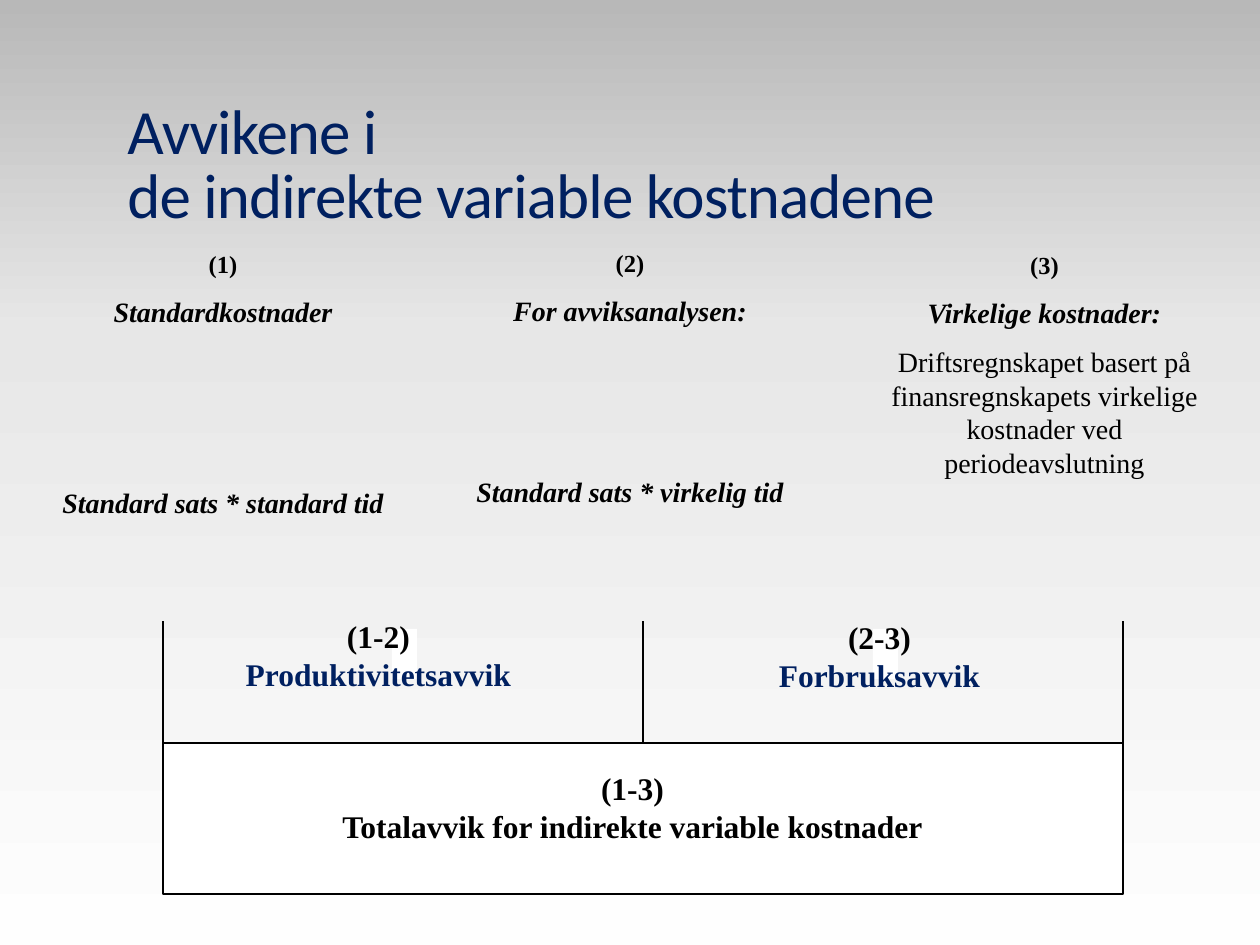
from copy import deepcopy

from lxml.etree import SubElement
from pptx import Presentation
from pptx.dml.color import RGBColor as RGB
from pptx.enum.shapes import MSO_CONNECTOR as CONN, MSO_SHAPE as SHAPE
from pptx.enum.text import MSO_ANCHOR as ANCHOR, PP_ALIGN as ALIGN
from pptx.oxml.ns import qn
from pptx.util import Emu, Pt


class Theme:
    heading_font, body_font = "Calibri", "Times New Roman"
    navy, black, white = (RGB.from_string(c) for c in ("002060", "000000", "FFFFFF"))
    background = [(0, "B8B8B8"), (35, "E7E7E7"), (100, "FEFEFE")]
    title, label, body, number = 36, 18, 16, 14
    gap = 9


# Content: each column is its box and (text, style, space before)
TITLE = "Avvikene i\vde indirekte variable kostnadene"
TITLE_BOX = (115, 86, 1240, 152)
COLUMNS = [
    ((42, 243, 362, 295), [
        ("(1)", "number", 0),
        ("Standardkostnader", "strong", Theme.gap),
        ("Standard sats * standard tid", "strong", 90)]),
    ((431, 242, 398, 281), [
        ("(2)", "number", 0),
        ("For avviksanalysen:", "strong", Theme.gap),
        ("Standard sats * virkelig tid", "strong", 84.5)]),
    ((874, 244, 341, 295), [
        ("(3)", "number", 0),
        ("Virkelige kostnader:", "strong", Theme.gap),
        ("Driftsregnskapet basert på finansregnskapets virkelige "
         "kostnader ved periodeavslutning", "plain", Theme.gap)]),
]
STYLES = {  # size, bold, italic, colour
    "number": (Theme.number, True, False, Theme.black),
    "strong": (Theme.body, True, True, Theme.black),
    "plain": (Theme.body, False, False, Theme.black),
    "label": (Theme.label, True, False, Theme.black),
    "variance": (Theme.label, True, False, Theme.navy),
}
LABELS = [
    ((233, 611, 291, 126), [("(1-2)", "label", 0), ("Produktivitetsavvik", "variance", 0)]),
    ((328, 763, 609, 126), [
        ("(1-3)", "label", 0),
        ("Totalavvik for indirekte variable kostnader", "label", 0)]),
    ((766, 612, 227, 88), [("(2-3)", "label", 0), ("Forbruksavvik", "variance", 0)]),
]
TOTAL_BOX = (163, 743, 960, 151)
PATCHES = [(392, 629, 25, 50), (873, 629, 25, 50)]
BRACKET_TOP = 621


def px(n):
    return Emu(round(n * 914400 / 126))


def add_text(s, box, wrap=True):
    tf = s.shapes.add_textbox(*map(px, box)).text_frame
    tf.word_wrap = wrap
    return tf


def add_paragraphs(s, box, lines, wrap=True):
    tf = add_text(s, box, wrap)
    tf.text = "\n".join(text for text, _, _ in lines)
    for p, (_, style, before) in zip(tf.paragraphs, lines):
        p.alignment = ALIGN.CENTER
        p.space_before = Pt(before)
        font = p.runs[0].font
        size, font.bold, font.italic, font.color.rgb = STYLES[style]
        font.size, font.name = Pt(size), Theme.body_font


def add_box(s, box, outlined=False):
    sp = s.shapes.add_shape(SHAPE.RECTANGLE, *map(px, box))
    sp.shadow.inherit = False
    sp.fill.solid()
    sp.fill.fore_color.rgb = Theme.white
    if outlined:
        sp.line.color.rgb, sp.line.width = Theme.black, Pt(1)
    else:
        sp.line.fill.background()
    return sp


def set_background(s):
    fill = s.background.fill
    fill.gradient()
    fill.gradient_angle = 270
    first = fill.gradient_stops[0]
    first.color.rgb = Theme.black
    stops = s.background._cSld.find(".//" + qn("a:gsLst"))
    pattern = deepcopy(stops[0])
    for old in list(stops):
        stops.remove(old)
    for position, colour in Theme.background:
        stop = deepcopy(pattern)
        stop.set("pos", str(position * 1000))
        stop[0].set("val", colour)
        stops.append(stop)


def main():
    prs = Presentation()
    prs.slide_width, prs.slide_height = px(1260), px(945)
    s = prs.slides.add_slide(prs.slide_layouts[6])
    set_background(s)

    # Title
    tf = add_text(s, TITLE_BOX)
    tf.vertical_anchor = ANCHOR.BOTTOM
    p = tf.paragraphs[0]
    p.text = TITLE
    p.line_spacing = 0.85
    for r in p.runs:
        r.font.size, r.font.name = Pt(Theme.title), Theme.heading_font
        r.font.color.rgb = Theme.navy
        r.font._element.set("spc", "-50")

    # Cost columns
    for box, lines in COLUMNS:
        add_paragraphs(s, box, lines)

    # Total box with three uprights, evenly spaced
    total = add_box(s, TOTAL_BOX, outlined=True)
    for patch in PATCHES:
        add_box(s, patch)
    left, top, width, _ = TOTAL_BOX
    for i in range(3):
        x = px(left + i * width / 2)
        line = s.shapes.add_connector(CONN.STRAIGHT, x, px(top), x, px(BRACKET_TOP))
        line.line.color.rgb, line.line.width = Theme.black, Pt(1)
        SubElement(line._element.spPr, qn("a:effectLst"))
        if i == 1:
            line.begin_connect(total, 0)

    # Variance labels
    for box, lines in LABELS:
        add_paragraphs(s, box, lines, wrap=False)

    prs.save("out.pptx")


if __name__ == "__main__":
    main()
